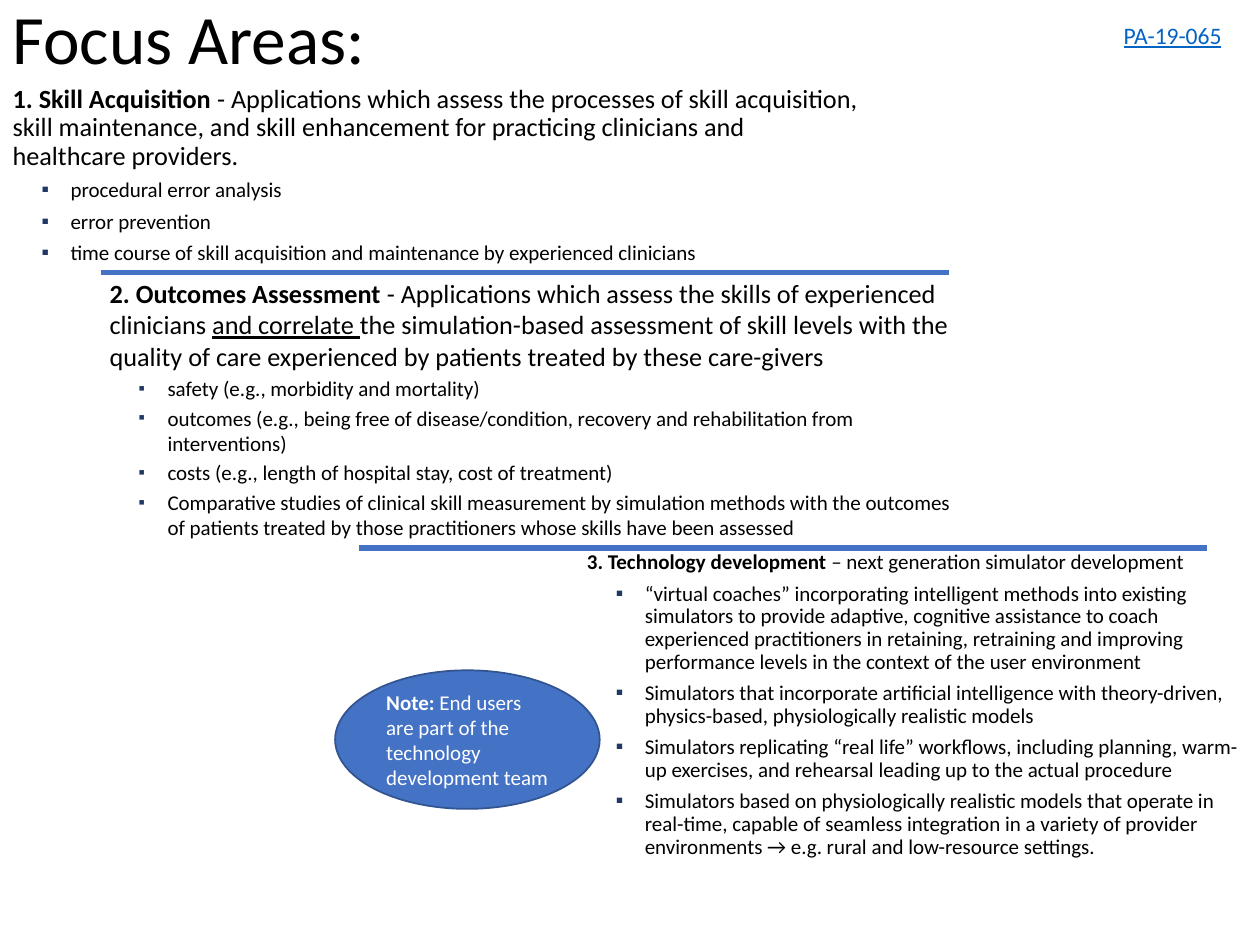
from lxml.etree import SubElement
from pptx import Presentation
from pptx.dml.color import RGBColor
from pptx.enum.shapes import MSO_CONNECTOR, MSO_SHAPE
from pptx.enum.text import MSO_ANCHOR, MSO_AUTO_SIZE, PP_ALIGN
from pptx.oxml.ns import qn
from pptx.util import Inches, Pt

BLACK = RGBColor(0x00, 0x00, 0x00)
WHITE = RGBColor(0xFF, 0xFF, 0xFF)
BLUE = RGBColor(0x44, 0x72, 0xC4)
DARK_BLUE = RGBColor(0x32, 0x54, 0x91)
BULLET_NAVY = RGBColor(0x20, 0x38, 0x64)
LINK_BLUE = RGBColor(0x05, 0x63, 0xC1)

SKILL_HEADING = [
    ("1. Skill Acquisition ", "bold"),
    ("- Applications which assess the processes of skill acquisition, skill maintenance, "
     "and skill enhancement for practicing clinicians and healthcare providers.", ""),
]
SKILL_ITEMS = [
    "procedural error analysis",
    "error prevention",
    "time course of skill acquisition and maintenance by experienced clinicians",
]
OUTCOMES_HEADING = [
    ("2. Outcomes Assessment ", "bold"),
    ("- Applications which assess the skills of experienced clinicians ", ""),
    ("and correlate ", "underline"),
    ("the simulation-based assessment of skill levels with the quality of care "
     "experienced by patients treated by these care-givers", ""),
]
OUTCOMES_ITEMS = [
    "safety (e.g., morbidity and mortality)",
    "outcomes (e.g., being free of disease/condition, recovery and rehabilitation from "
    "interventions)",
    "costs (e.g., length of hospital stay, cost of treatment)",
    "Comparative studies of clinical skill measurement by simulation methods with the "
    "outcomes of patients treated by those practitioners whose skills have been assessed",
]
TECHNOLOGY_HEADING = [
    ("3. Technology development ", "bold"),
    ("– next generation simulator development", ""),
]
TECHNOLOGY_ITEMS = [
    "“virtual coaches” incorporating intelligent methods into existing simulators to "
    "provide adaptive, cognitive assistance to coach experienced practitioners in "
    "retaining, retraining and improving performance levels in the context of the user "
    "environment",
    "Simulators that incorporate artificial intelligence with theory-driven, "
    "physics-based, physiologically realistic models",
    "Simulators replicating “real life” workflows, including planning, warm-up exercises, "
    "and rehearsal leading up to the actual procedure",
    "Simulators based on physiologically realistic models that operate in real-time, "
    "capable of seamless integration in a variety of provider environments → e.g. rural "
    "and low-resource settings.",
]


class SlideBuilder:
    font_name = "Calibri"
    body_size = 12

    def __init__(self, slide):
        self.slide = slide

    def place(self, shape, left, top, width, height):
        shape.left, shape.top = Inches(left), Inches(top)
        shape.width, shape.height = Inches(width), Inches(height)

    def style(self, font, size, color, emphasis=""):
        font.name = self.font_name
        font.size = Pt(size)
        font.color.rgb = color
        font.bold = emphasis == "bold"
        font.underline = emphasis == "underline"

    def add_runs(self, paragraph, parts, size, color=BLACK):
        for text, emphasis in parts:
            run = paragraph.add_run()
            run.text = text
            self.style(run.font, size, color, emphasis)

    def set_bullet(self, paragraph, percent):
        properties = paragraph._p.get_or_add_pPr()
        properties.set("marL", str(Inches(0.46)))
        properties.set("indent", str(Inches(-0.23)))
        bullet_color = SubElement(properties, qn("a:buClr"))
        SubElement(bullet_color, qn("a:srgbClr"), val=str(BULLET_NAVY))
        SubElement(properties, qn("a:buSzPct"), val=str(percent * 1000))
        SubElement(properties, qn("a:buFont"), typeface=self.font_name)
        SubElement(properties, qn("a:buChar"), char="▪")

    def title(self, text, *box):
        shape = self.slide.shapes.title
        self.place(shape, *box)
        frame = shape.text_frame
        frame.text = text
        frame.auto_size = MSO_AUTO_SIZE.NONE
        frame.vertical_anchor = MSO_ANCHOR.MIDDLE
        paragraph = frame.paragraphs[0]
        paragraph.alignment = PP_ALIGN.LEFT
        paragraph.line_spacing = 0.9
        self.style(paragraph.runs[0].font, 39.6, BLACK)

    def text_box(self, *box):
        return self.slide.shapes.add_textbox(*(Inches(length) for length in box))

    def focus_area(self, shape, box, heading, items, heading_size=15,
                   line_spacing=0.9, gap=5, bullet_percent=100):
        self.place(shape, *box)
        frame = shape.text_frame
        frame.word_wrap = True
        frame.auto_size = MSO_AUTO_SIZE.NONE
        first = frame.paragraphs[0]
        properties = first._p.get_or_add_pPr()
        properties.set("marL", "0")
        properties.set("indent", "0")
        SubElement(properties, qn("a:buNone"))
        first.space_before = Pt(0)
        first.line_spacing = line_spacing
        self.add_runs(first, heading, heading_size)
        for item in items:
            paragraph = frame.add_paragraph()
            paragraph.level = 1
            self.set_bullet(paragraph, bullet_percent)
            paragraph.line_spacing = line_spacing
            paragraph.space_before = Pt(gap)
            self.add_runs(paragraph, [(item, "")], self.body_size)
        return frame

    def reference(self, text, *box):
        frame = self.text_box(*box).text_frame
        frame.word_wrap = False
        frame.auto_size = MSO_AUTO_SIZE.SHAPE_TO_FIT_TEXT
        self.add_runs(frame.paragraphs[0], [(text, "underline")], 13.5, LINK_BLUE)

    def note(self, parts, *box):
        shape = self.slide.shapes.add_shape(
            MSO_SHAPE.OVAL, *(Inches(length) for length in box))
        shape.shadow.inherit = False
        shape.fill.solid()
        shape.fill.fore_color.rgb = BLUE
        shape.line.color.rgb = DARK_BLUE
        shape.line.width = Pt(1)
        shape.text_frame.vertical_anchor = MSO_ANCHOR.MIDDLE
        paragraph = shape.text_frame.paragraphs[0]
        paragraph.alignment = PP_ALIGN.LEFT
        self.add_runs(paragraph, parts, self.body_size, WHITE)

    def divider(self, left, top, width=6.73):
        line = self.slide.shapes.add_connector(
            MSO_CONNECTOR.STRAIGHT, Inches(left), Inches(top),
            Inches(left + width), Inches(top))
        line.line.color.rgb = BLUE
        line.line.width = Pt(3)
        SubElement(line._element.spPr, qn("a:effectLst"))


def main():
    presentation = Presentation()
    presentation.slide_width = Inches(10)
    presentation.slide_height = Inches(7.5)
    slide = presentation.slides.add_slide(presentation.slide_layouts[1])
    builder = SlideBuilder(slide)

    # Title and first focus area
    builder.title("Focus Areas:", 0, 0.08, 9, 0.51)
    builder.focus_area(slide.placeholders[1], (0, 0.63, 6.94, 1.67),
                       SKILL_HEADING, SKILL_ITEMS)

    # Second focus area, with narrower margins
    outcomes_box = (0.8, 2.16, 6.94, 2.38)
    frame = builder.focus_area(builder.text_box(*outcomes_box), outcomes_box,
                               OUTCOMES_HEADING, OUTCOMES_ITEMS,
                               line_spacing=1.0, gap=2.4, bullet_percent=85)
    frame.margin_left = frame.margin_right = Inches(0.07)
    frame.margin_top = frame.margin_bottom = Inches(0.04)

    # Announcement number
    builder.reference("PA-19-065", 8.82, 0.12, 0.99, 0.33)

    # Third focus area and its note
    technology_box = (4.56, 4.33, 5.44, 2.54)
    builder.focus_area(builder.text_box(*technology_box), technology_box,
                       TECHNOLOGY_HEADING, TECHNOLOGY_ITEMS, heading_size=12)
    builder.note([("Note:", "bold"),
                  (" End users are part of the technology development team", "")],
                 2.66, 5.32, 2.1, 1.1)

    # Dividers between the areas
    builder.divider(0.8, 2.16)
    builder.divider(2.85, 4.35)

    presentation.save("out.pptx")


if __name__ == "__main__":
    main()
